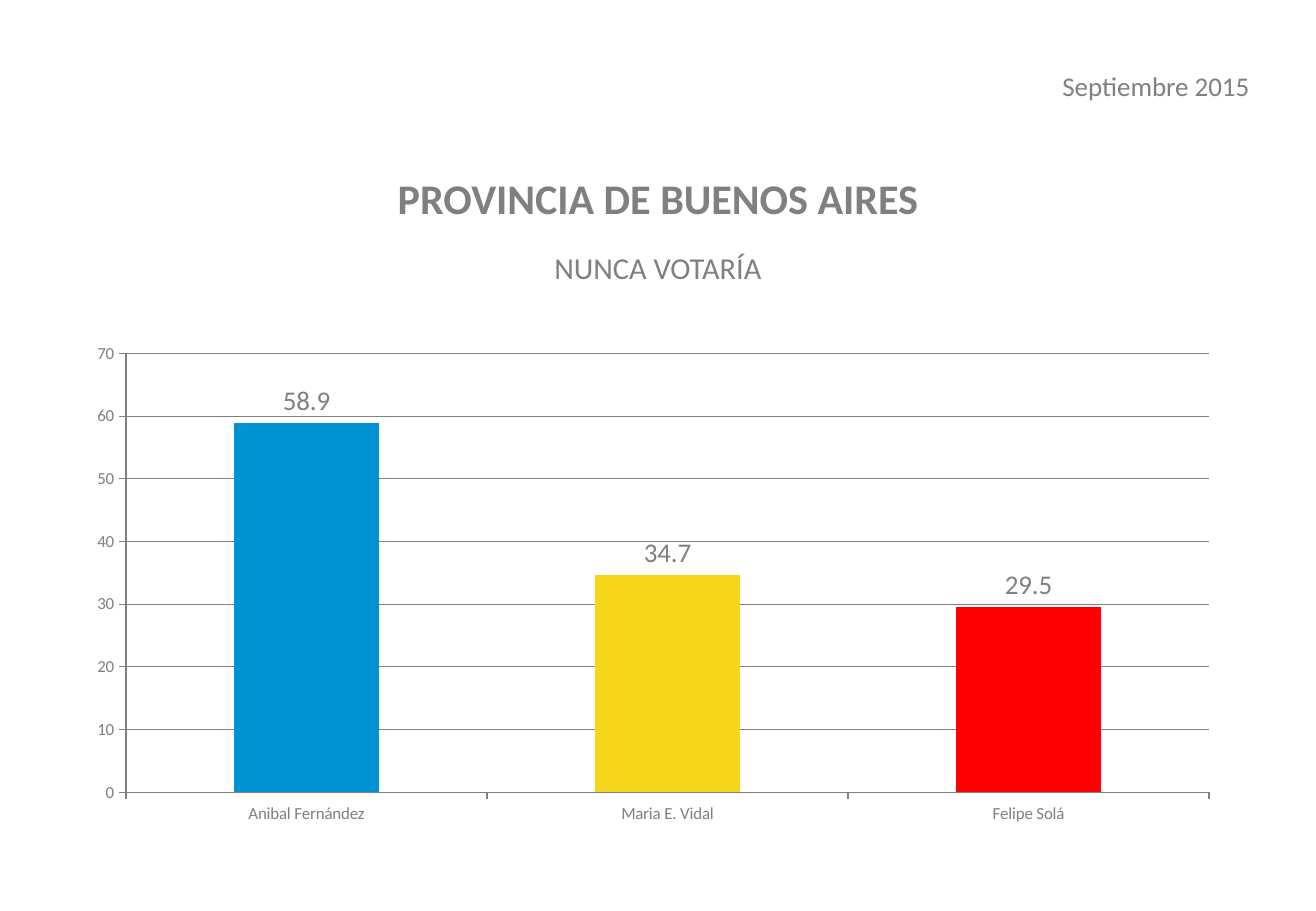
"""Builds the slide on rejection of candidates in the Province of Buenos Aires."""
from pptx import Presentation
from pptx.chart.data import CategoryChartData
from pptx.dml.color import RGBColor
from pptx.enum.chart import XL_CHART_TYPE, XL_LABEL_POSITION, XL_TICK_MARK
from pptx.enum.text import MSO_ANCHOR, PP_ALIGN
from pptx.util import Inches, Pt

COLUMNS = XL_CHART_TYPE.COLUMN_CLUSTERED
ABOVE = XL_LABEL_POSITION.OUTSIDE_END
OUTSIDE = XL_TICK_MARK.OUTSIDE
CENTER, RIGHT = PP_ALIGN.CENTER, PP_ALIGN.RIGHT
TOP = MSO_ANCHOR.TOP

THEME = {
    "font": "Calibri",
    "gray": "808080",
    "date": 16, "title": 25, "subtitle": 18, "axis": 10, "value": 16,
}
SIZE = (10.83, 7.5)
DATE = "Septiembre 2015"
TITLE = "PROVINCIA DE BUENOS AIRES"
SUBTITLE = "NUNCA VOTARÍA"
CANDIDATES = [
    ("Anibal Fernández", 58.9, "0092D2"),
    ("Maria E. Vidal", 34.7, "F5D61B"),
    ("Felipe Solá", 29.5, "FF0000"),
]
DATE_AREA = (8.57, 0.52, 1.81, 0.37)
HEADING_AREA = (0, 1.47, SIZE[0], 1.64)
CHART_AREA = (0.61, 2.75, 9.53, 4.11)


def style(font, role, bold=False):
    font.name = THEME["font"]
    font.size = Pt(THEME[role])
    font.bold = bold
    font.color.rgb = RGBColor.from_string(THEME["gray"])


def add_text(page, area, lines, align):
    box = page.shapes.add_textbox(*map(Inches, area))
    frame = box.text_frame
    frame.word_wrap = True
    frame.vertical_anchor = TOP
    frame.text = "\n".join(text for text, _, _ in lines)
    for para, (_, role, bold) in zip(frame.paragraphs, lines):
        para.alignment = align
        style(para.runs[0].font, role, bold)
    return frame


def add_heading(page):
    lines = [(TITLE, "title", True), (SUBTITLE, "subtitle", False)]
    frame = add_text(page, HEADING_AREA, lines, CENTER)
    frame.margin_top = Inches(0.03)
    for para in frame.paragraphs:
        para.line_spacing = 0.8
    frame.paragraphs[1].space_before = Pt(20)


def add_rejection_chart(page):
    names, values, colors = zip(*CANDIDATES)
    data = CategoryChartData()
    data.categories = names
    data.add_series("Nunca votaría", values)
    chart = page.shapes.add_chart(COLUMNS, *map(Inches, CHART_AREA), data).chart
    chart.has_legend = False
    chart.has_title = False
    style(chart.font, "axis")

    gray = RGBColor.from_string(THEME["gray"])
    scale = chart.value_axis
    scale.minimum_scale, scale.maximum_scale, scale.major_unit = 0, 70, 10
    scale.has_major_gridlines = True
    for axis in (chart.category_axis, scale):
        axis.major_tick_mark = OUTSIDE
        axis.format.line.color.rgb = gray
    scale.major_gridlines.format.line.color.rgb = gray

    plot = chart.plots[0]
    plot.gap_width = 150
    plot.vary_by_categories = False
    for index, color in enumerate(colors):
        fill = plot.series[0].points[index].format.fill
        fill.solid()
        fill.fore_color.rgb = RGBColor.from_string(color)
    labels = plot.series[0].data_labels
    labels.show_value = True
    labels.position = ABOVE
    style(labels.font, "value")


def main():
    deck = Presentation()
    deck.slide_width, deck.slide_height = map(Inches, SIZE)
    page = deck.slides.add_slide(deck.slide_layouts[6])
    add_rejection_chart(page)
    add_heading(page)
    add_text(page, DATE_AREA, [(DATE, "date", False)], RIGHT)
    deck.save("out.pptx")


if __name__ == "__main__":
    main()
